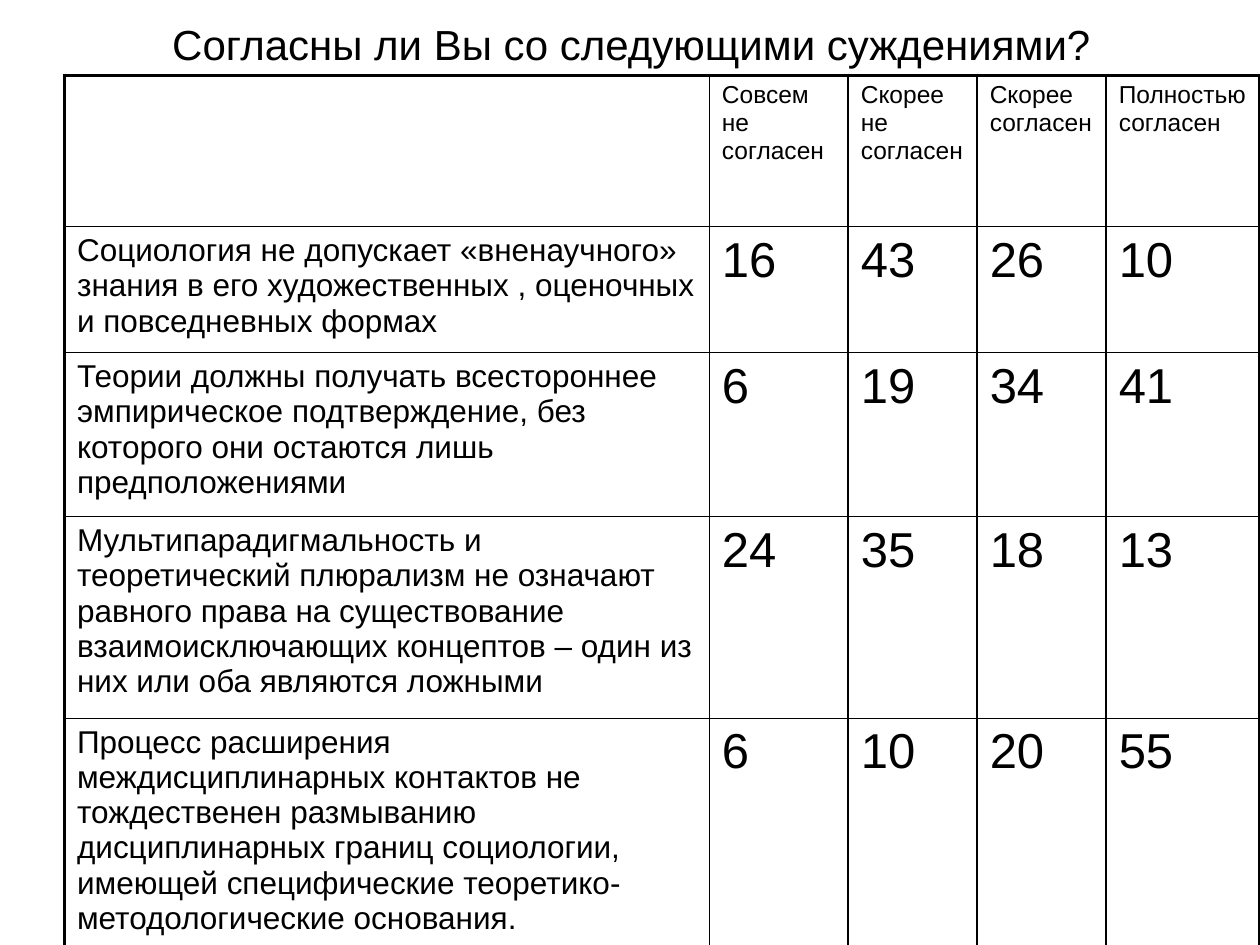
"""Build a slide with a table of answers to a survey on sociology."""
from lxml import etree
from pptx import Presentation
from pptx import util as u
from pptx.dml.color import RGBColor
from pptx.enum import text
from pptx.oxml.ns import qn

COLOURS = {"ink": "000000", "paper": "FFFFFF"}
FORMATS = {
    "title": {"name": "Arial", "size": u.Pt(24), "bold": False},
    "heading": {"name": "Arial", "size": u.Pt(14), "bold": False},
    "statement": {"name": "Arial", "size": u.Pt(18), "bold": False},
    "value": {"name": "Arial", "size": u.Pt(28), "bold": False},
}
COLUMN_WIDTHS = [13, 2.8, 2.6, 2.6, 3.1]
ROW_HEIGHTS = [3.05, 2.54, 3.3, 4.06, 4.98]
ROWS = [
    ["", "Совсем не согласен", "Скорее не согласен", "Скорее согласен", "Полностью согласен"],
    ["Социология не допускает «вненаучного» знания в его художественных , "
     "оценочных и повседневных формах", 16, 43, 26, 10],
    ["Теории должны получать всестороннее эмпирическое подтверждение, без "
     "которого они остаются лишь предположениями", 6, 19, 34, 41],
    ["Мультипарадигмальность и теоретический плюрализм не означают равного "
     "права на существование взаимоисключающих концептов – один из них или "
     "оба являются ложными", 24, 35, 18, 13],
    ["Процесс расширения междисциплинарных контактов не тождественен размыванию "
     "дисциплинарных границ социологии, имеющей специфические "
     "теоретико-методологические основания.", 6, 10, 20, 55],
]


def write(para, words, style):
    span = para.add_run()
    span.text = str(words)
    for name, value in FORMATS[style].items():
        setattr(span.font, name, value)
    span.font.color.rgb = RGBColor.from_string(COLOURS["ink"])


def draw_border(cell, side, points):
    line = etree.SubElement(cell._tc.get_or_add_tcPr(), qn(f"a:ln{side}"), w=str(u.Pt(points)))
    fill = etree.SubElement(line, qn("a:solidFill"))
    etree.SubElement(fill, qn("a:srgbClr"), val=COLOURS["ink"])


deck = Presentation()
deck.slide_width, deck.slide_height = u.Cm(25.4), u.Cm(19.05)
page = deck.slides.add_slide(deck.slide_layouts[6])
page.background.fill.solid()
page.background.fill.fore_color.rgb = RGBColor.from_string(COLOURS["paper"])

title_box = page.shapes.add_textbox(u.Cm(1.3), u.Cm(0), u.Cm(22.86), u.Cm(1.75))
title_frame = title_box.text_frame
for name, value in {"word_wrap": True, "vertical_anchor": text.MSO_ANCHOR.MIDDLE}.items():
    setattr(title_frame, name, value)
title_para = title_frame.paragraphs[0]
title_para.alignment = text.PP_ALIGN.CENTER
write(title_para, "Согласны ли Вы со следующими суждениями?", "title")

table = page.shapes.add_table(
    len(ROWS), len(COLUMN_WIDTHS), u.Cm(1.3), u.Cm(1.52),
    u.Cm(sum(COLUMN_WIDTHS)), u.Cm(sum(ROW_HEIGHTS))).table
for name in ("first_row", "horz_banding"):
    setattr(table, name, False)
for column, width in zip(table.columns, COLUMN_WIDTHS):
    column.width = u.Cm(width)
for row, height in zip(table.rows, ROW_HEIGHTS):
    row.height = u.Cm(height)

last_row, last_column = len(ROWS) - 1, len(COLUMN_WIDTHS) - 1
for r, entries in enumerate(ROWS):
    for c, words in enumerate(entries):
        cell = table.cell(r, c)
        outer_sides = {"L": c == 0, "R": c == last_column, "T": r == 0, "B": r == last_row}
        for side, outer in outer_sides.items():
            draw_border(cell, side, 2.25 if outer else 1)
        cell.fill.background()
        style = "heading" if r == 0 else "statement" if c == 0 else "value"
        if words != "":
            write(cell.text_frame.paragraphs[0], words, style)

deck.save("out.pptx")
